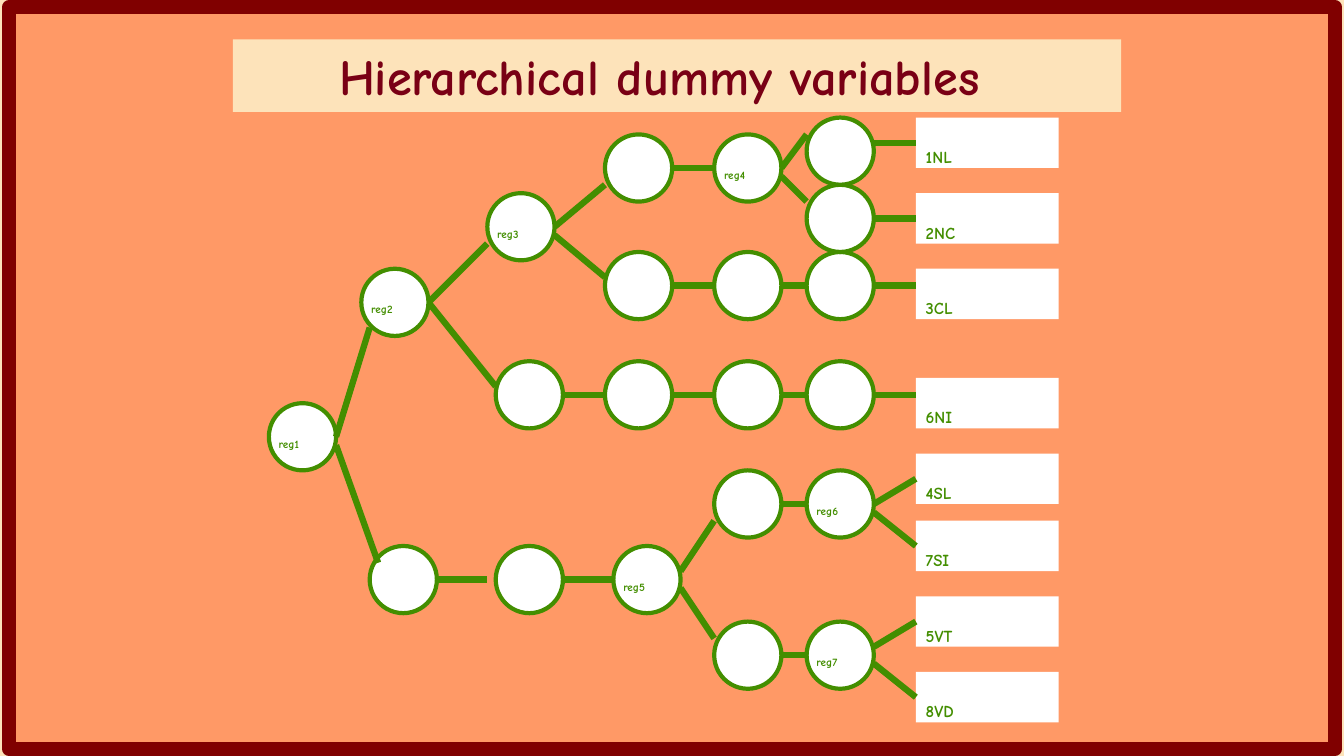
from pptx import Presentation
from pptx.dml.color import RGBColor
from pptx.enum import shapes, text
from pptx.oxml import parse_xml
from pptx.oxml.ns import nsdecls
from pptx.util import Inches, Pt

CREAM = RGBColor(0xFD, 0xE3, 0xBA)
ORANGE = RGBColor(0xFF, 0x99, 0x66)
MAROON = RGBColor(0x80, 0x00, 0x00)
TITLE_RED = RGBColor(0x79, 0x00, 0x15)
GREEN = RGBColor(0x43, 0x8E, 0x00)
WHITE = RGBColor(0xFF, 0xFF, 0xFF)
FONT = "Comic Neue"
RECTANGLE = shapes.MSO_SHAPE.RECTANGLE
CIRCLE = shapes.MSO_SHAPE.FLOWCHART_CONNECTOR

# The tree lies on a grid of twelfths of an inch
NODE_SIZE = 8
OUTCOME_X, OUTCOME_WIDTH, OUTCOME_HEIGHT = 109, 17, 6

# Regression nodes: label, left, top
REGRESSIONS = [
    ("reg1", 32, 48), ("reg2", 43, 32), ("reg3", 58, 23), ("reg4", 85, 16),
    ("reg5", 73, 65), ("reg6", 96, 56), ("reg7", 96, 74),
]
# Outcomes: label, top, height where the line from the last node starts
OUTCOMES = [
    ("1NL", 14, 17), ("2NC", 23, 26), ("3CL", 32, None), ("6NI", 45, None),
    ("4SL", 54, 60), ("7SI", 62, 61), ("5VT", 71, 77), ("8VD", 80, 79),
]
# Empty nodes: top of the row, left of each node
EMPTY_ROWS = {
    65: [44, 59], 43: [59, 72, 85, 96], 56: [85], 74: [85],
    16: [72], 30: [72, 85, 96], 22: [96], 14: [96],
}
# Level links: top of the row, start and end of each link
LEVEL_LINKS = {
    65: [(52, 58), (67, 73)], 74: [(93, 96)], 56: [(93, 96)],
    43: [(67, 72), (80, 85), (93, 96), (104, 109)],
    30: [(80, 85), (93, 96), (104, 109)], 16: [(80, 85)],
}
# Branches: start x, start y, end x, end y
BRANCHES = [
    (40, 53, 45, 67), (40, 52, 44, 39), (51, 36, 59, 46), (51, 36, 58, 29),
    (66, 27, 72, 22), (66, 28, 72, 33), (81, 70, 85, 76), (81, 68, 85, 62),
    (93, 20, 96, 16), (93, 21, 96, 24),
]


def grid(*steps):
    return [Inches(step / 12) for step in steps]


def add_box(page, kind, place, fill, line=None, width=0):
    box = page.shapes.add_shape(kind, *place)
    box.shadow.inherit = False
    box.fill.solid()
    box.fill.fore_color.rgb = fill
    if line is None:
        box.line.fill.background()
    else:
        box.line.color.rgb = line
        box.line.width = Pt(width)
    return box


def write(box, words, size, color, align, **frame_format):
    frame = box.text_frame
    frame.word_wrap = True
    for name, value in frame_format.items():
        setattr(frame, name, value)
    para = frame.paragraphs[0]
    para.alignment = align
    span = para.add_run()
    span.text = words
    for name, value in {"name": FONT, "size": Pt(size), "bold": True}.items():
        setattr(span.font, name, value)
    span.font.color.rgb = color


def add_label(box, words, size, bottom):
    write(box, words, size, GREEN, text.PP_ALIGN.LEFT, margin_top=0,
          margin_bottom=Inches(bottom), vertical_anchor=text.MSO_ANCHOR.BOTTOM)


def add_node(page, left, top, label=None):
    place = grid(left, top, NODE_SIZE, NODE_SIZE)
    add_box(page, CIRCLE, place, WHITE, GREEN, 3)
    if label:
        box = page.shapes.add_textbox(place[0], place[1] + Inches(0.13),
                                      Inches(0.83), Inches(0.37))
        add_label(box, label, 8, 0.03)


def add_outcome(page, label, top):
    place = grid(OUTCOME_X, top, OUTCOME_WIDTH, OUTCOME_HEIGHT)
    box = add_box(page, RECTANGLE, place, WHITE)
    add_label(box, label, 12, 0.01)
    return box


def add_link(page, x1, y1, x2, y2):
    link = page.shapes.add_connector(shapes.MSO_CONNECTOR.STRAIGHT,
                                     *grid(x1, y1, x2, y2))
    link.line.color.rgb = GREEN
    link.line.width = Pt(4.5)
    link._element.spPr.append(parse_xml(f"<a:effectLst {nsdecls('a')}/>"))
    return link


def add_title(page):
    place = [Inches(n) for n in (2.31, 0.39, 8.81, 0.72)]
    box = add_box(page, RECTANGLE, place, CREAM)
    write(box, "Hierarchical dummy variables", 36, TITLE_RED,
          text.PP_ALIGN.CENTER, margin_right=Inches(0.45),
          vertical_anchor=text.MSO_ANCHOR.MIDDLE)


def main():
    deck = Presentation()
    deck.slide_width, deck.slide_height = Inches(13.33), Inches(7.5)
    page = deck.slides.add_slide(deck.slide_layouts[6])

    # Background, frame and title
    page.background.fill.solid()
    page.background.fill.fore_color.rgb = CREAM
    place = [Inches(n) for n in (0.09, 0.07, 13.15, 7.36)]
    add_box(page, RECTANGLE, place, ORANGE, MAROON, 10)
    add_title(page)

    # Nodes and outcomes
    for label, left, top in REGRESSIONS:
        add_node(page, left, top, label)
    outcomes = [add_outcome(page, label, top) for label, top, _ in OUTCOMES]
    for top, lefts in EMPTY_ROWS.items():
        for left in lefts:
            add_node(page, left, top)

    # Links between levels, branches, and lines to the outcomes
    for top, spans in LEVEL_LINKS.items():
        middle = top + NODE_SIZE / 2
        for start, end in spans:
            add_link(page, start, middle, end, middle)
    for branch in BRANCHES:
        add_link(page, *branch)
    for box, (_, top, start) in zip(outcomes, OUTCOMES):
        if start is not None:
            link = add_link(page, 104, start, OUTCOME_X, top + OUTCOME_HEIGHT / 2)
            link.end_connect(box, 1)

    deck.save("out.pptx")


if __name__ == "__main__":
    main()
